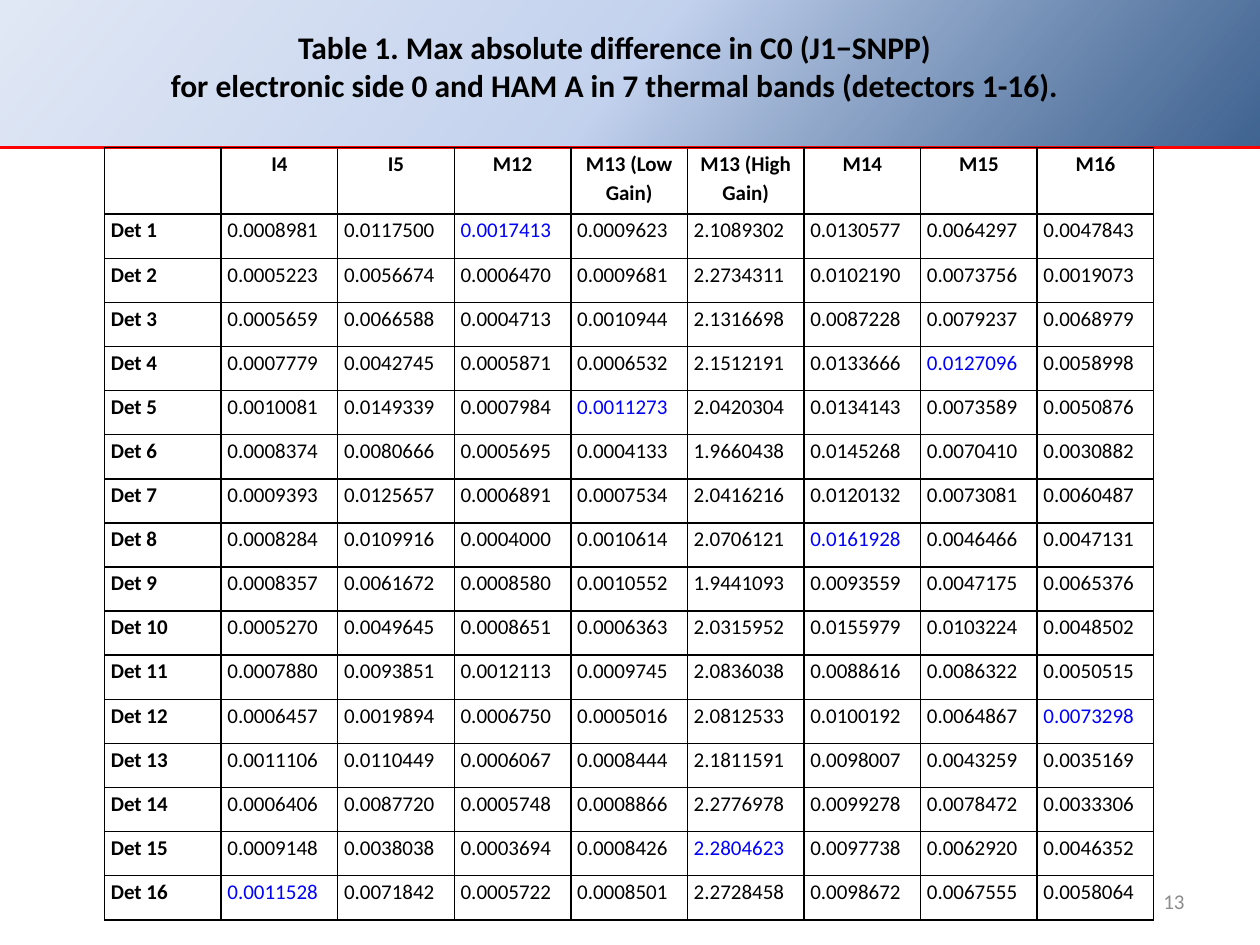
from lxml import etree
from pptx import Presentation
from pptx.dml.color import RGBColor
from pptx.enum.shapes import MSO_CONNECTOR, MSO_SHAPE
from pptx.enum.text import MSO_ANCHOR, PP_ALIGN
from pptx.oxml import parse_xml
from pptx.oxml.ns import nsdecls, qn
from pptx.util import Inches, Pt

CENTER, RIGHT, LEFT = PP_ALIGN.CENTER, PP_ALIGN.RIGHT, PP_ALIGN.LEFT
MIDDLE = MSO_ANCHOR.MIDDLE
BLACK = RGBColor(0x00, 0x00, 0x00)
BLUE = RGBColor(0x00, 0x00, 0xFF)
RED = RGBColor(0xFF, 0x00, 0x00)
GRAY = RGBColor(0x8C, 0x8C, 0x8C)
FONT = "Calibri"

# Content
TITLE = [
    "Table 1. Max absolute difference in C0 (J1−SNPP)",
    "for electronic side 0 and HAM A in 7 thermal bands (detectors 1-16).",
]
PAGE_NUMBER = "13"
BANDS = ["I4", "I5", "M12", "M13 (Low Gain)", "M13 (High Gain)", "M14", "M15", "M16"]
DIFFERENCES = [
    "0.0008981 0.0117500 0.0017413 0.0009623 2.1089302 0.0130577 0.0064297 0.0047843",
    "0.0005223 0.0056674 0.0006470 0.0009681 2.2734311 0.0102190 0.0073756 0.0019073",
    "0.0005659 0.0066588 0.0004713 0.0010944 2.1316698 0.0087228 0.0079237 0.0068979",
    "0.0007779 0.0042745 0.0005871 0.0006532 2.1512191 0.0133666 0.0127096 0.0058998",
    "0.0010081 0.0149339 0.0007984 0.0011273 2.0420304 0.0134143 0.0073589 0.0050876",
    "0.0008374 0.0080666 0.0005695 0.0004133 1.9660438 0.0145268 0.0070410 0.0030882",
    "0.0009393 0.0125657 0.0006891 0.0007534 2.0416216 0.0120132 0.0073081 0.0060487",
    "0.0008284 0.0109916 0.0004000 0.0010614 2.0706121 0.0161928 0.0046466 0.0047131",
    "0.0008357 0.0061672 0.0008580 0.0010552 1.9441093 0.0093559 0.0047175 0.0065376",
    "0.0005270 0.0049645 0.0008651 0.0006363 2.0315952 0.0155979 0.0103224 0.0048502",
    "0.0007880 0.0093851 0.0012113 0.0009745 2.0836038 0.0088616 0.0086322 0.0050515",
    "0.0006457 0.0019894 0.0006750 0.0005016 2.0812533 0.0100192 0.0064867 0.0073298",
    "0.0011106 0.0110449 0.0006067 0.0008444 2.1811591 0.0098007 0.0043259 0.0035169",
    "0.0006406 0.0087720 0.0005748 0.0008866 2.2776978 0.0099278 0.0078472 0.0033306",
    "0.0009148 0.0038038 0.0003694 0.0008426 2.2804623 0.0097738 0.0062920 0.0046352",
    "0.0011528 0.0071842 0.0005722 0.0008501 2.2728458 0.0098672 0.0067555 0.0058064",
]
# Band -> detector whose value is marked blue
MARKED = {"I4": 16, "M12": 1, "M13 (Low Gain)": 5, "M13 (High Gain)": 15,
          "M14": 8, "M15": 4, "M16": 12}

# Layout, in inches
SLIDE_W, SLIDE_H = 10, 7.5
BAND_H = 1.17
TABLE_LEFT, TABLE_W = 0.83, 8.33
HEADER_H, ROW_H = 0.53, 0.35
# Position in percent, colour, opacity in percent
GRADIENT = [(0, "1F497D", 85), (50, "C2D1ED", 100), (100, "E1E8F5", 100)]
GRADIENT_ANGLE = 220


def style(paragraph, size, color, align, bold=False):
    paragraph.alignment = align
    for run in paragraph.runs:
        run.font.name = FONT
        run.font.size = Pt(size)
        run.font.bold = bold
        run.font.color.rgb = color


def add_header_band(slide):
    band = slide.shapes.add_shape(
        MSO_SHAPE.RECTANGLE, 0, 0, Inches(SLIDE_W), Inches(BAND_H))
    band.shadow.inherit = False
    band.line.fill.background()
    stops = "".join(
        f'<a:gs pos="{pos * 1000}"><a:srgbClr val="{color}">'
        f'<a:alpha val="{opacity * 1000}"/></a:srgbClr></a:gs>'
        for pos, color, opacity in GRADIENT)
    gradient = parse_xml(
        f'<a:gradFill {nsdecls("a")} rotWithShape="1"><a:gsLst>{stops}</a:gsLst>'
        f'<a:lin ang="{GRADIENT_ANGLE * 60000}" scaled="0"/></a:gradFill>')
    band._element.spPr.find(qn("a:prstGeom")).addnext(gradient)

    rule = slide.shapes.add_connector(
        MSO_CONNECTOR.STRAIGHT, 0, Inches(BAND_H), Inches(SLIDE_W), Inches(BAND_H))
    rule.line.color.rgb = RED
    rule.line.width = Pt(1.5)
    etree.SubElement(rule._element.spPr, qn("a:effectLst"))


def add_borders(cell):
    properties = cell._tc.get_or_add_tcPr()
    for index, side in enumerate(("lnL", "lnR", "lnT", "lnB")):
        properties.insert(index, parse_xml(
            f'<a:{side} {nsdecls("a")} w="{Pt(1)}"><a:solidFill>'
            f'<a:srgbClr val="{BLACK}"/></a:solidFill></a:{side}>'))


def add_difference_table(slide):
    rows = [["", *BANDS]]
    rows += [[f"Det {number}", *line.split()]
             for number, line in enumerate(DIFFERENCES, 1)]
    table = slide.shapes.add_table(
        len(rows), len(rows[0]), Inches(TABLE_LEFT), Inches(BAND_H),
        Inches(TABLE_W), Inches(HEADER_H + ROW_H * len(DIFFERENCES))).table
    table.first_row = table.horz_banding = False
    for column in table.columns:
        column.width = Inches(TABLE_W / len(rows[0]))
    for r, values in enumerate(rows):
        table.rows[r].height = Inches(ROW_H if r else HEADER_H)
        for c, value in enumerate(values):
            cell = table.cell(r, c)
            cell.margin_left = cell.margin_right = Inches(0.05)
            cell.margin_top = cell.margin_bottom = 0
            cell.fill.background()
            add_borders(cell)
            cell.text_frame.text = value
            paragraph = cell.text_frame.paragraphs[0]
            paragraph.line_spacing = 1.15
            marked = r > 0 and c > 0 and MARKED.get(BANDS[c - 1]) == r
            style(paragraph, 12, BLUE if marked else BLACK,
                  LEFT if r else CENTER, bold=r == 0 or c == 0)


def place_title(slide):
    title = slide.shapes.title
    title.left, title.top = Inches(1.23), Inches(0.17)
    title.width, title.height = Inches(7.3), Inches(0.71)
    frame = title.text_frame
    frame.text = "\n".join(TITLE)
    frame.word_wrap = False
    frame.vertical_anchor = MIDDLE
    for paragraph in frame.paragraphs:
        paragraph.space_before = Pt(0)
        style(paragraph, 18, BLACK, CENTER, bold=True)
    # Bring the title in front of the header band
    slide.shapes._spTree.append(title._element)


def add_page_number(slide):
    box = slide.shapes.add_textbox(
        Inches(7.17), Inches(6.95), Inches(2.33), Inches(0.4))
    frame = box.text_frame
    frame.word_wrap = True
    frame.vertical_anchor = MIDDLE
    frame.text = PAGE_NUMBER
    style(frame.paragraphs[0], 12, GRAY, RIGHT)


def main():
    deck = Presentation()
    deck.slide_width, deck.slide_height = Inches(SLIDE_W), Inches(SLIDE_H)
    slide = deck.slides.add_slide(deck.slide_layouts[5])
    add_header_band(slide)
    add_page_number(slide)
    add_difference_table(slide)
    place_title(slide)
    deck.save("out.pptx")


if __name__ == "__main__":
    main()
